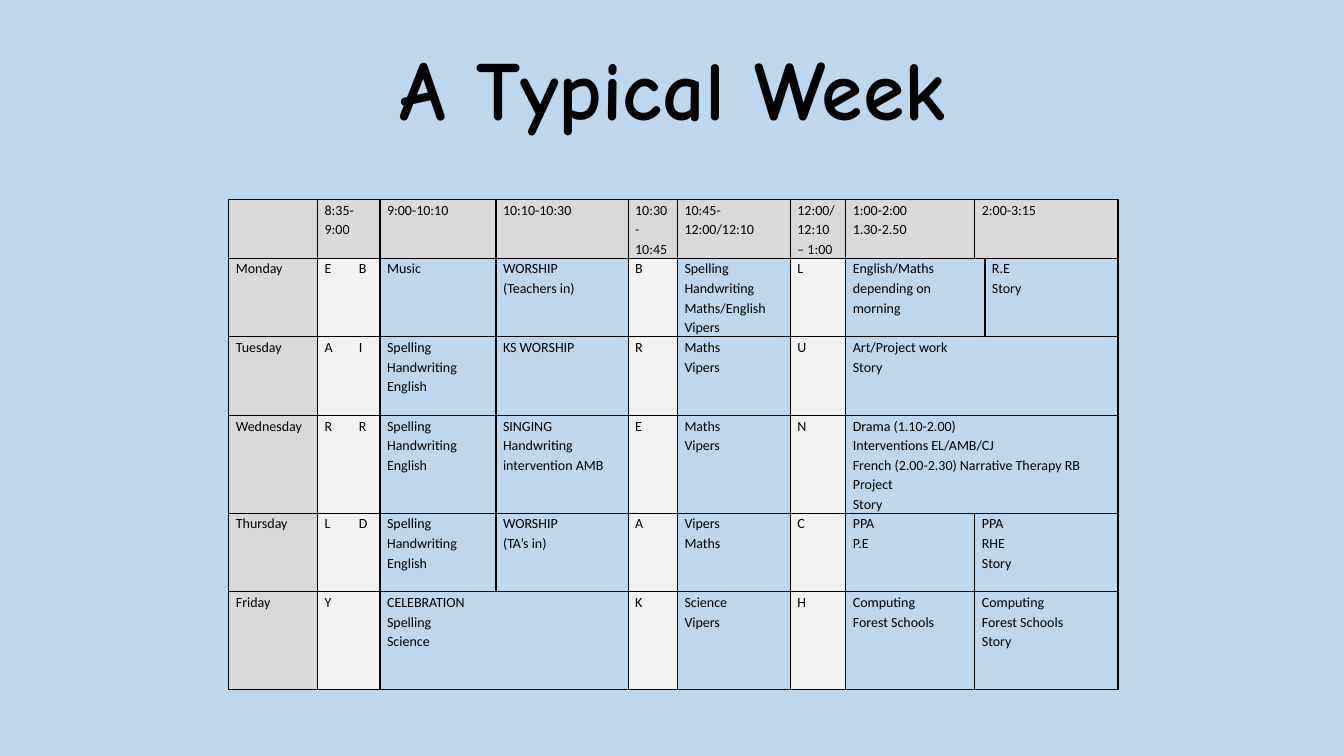
from dataclasses import dataclass

from lxml.etree import SubElement
from pptx import Presentation
from pptx.dml.color import RGBColor
from pptx.enum.text import MSO_ANCHOR, PP_ALIGN
from pptx.oxml.ns import qn
from pptx.slide import Slide
from pptx.table import _Cell as Cell
from pptx.util import Inches, Pt

BLACK = RGBColor(0x00, 0x00, 0x00)
SKY = RGBColor(0xBD, 0xD7, 0xEE)
HEADING_GREY = RGBColor(0xD9, 0xD9, 0xD9)
BREAK_GREY = RGBColor(0xF2, 0xF2, 0xF2)

COLUMN_WIDTHS = (0.88, 0.62, 1.15, 1.31, 0.49, 1.12, 0.55, 1.28, 0.1, 1.32)
ROW_HEIGHTS = (0.58, 0.78, 0.78, 0.97, 0.78, 0.97)
BREAK_COLUMNS = (1, 4, 6)  # early bird, break, lunch
EARLY_BIRD_TAB = 0.34


@dataclass(frozen=True)
class Slot:
    """One timetable entry: its lines and how many columns it covers."""
    lines: tuple[str, ...] = ()
    span: int = 1


def slot(*lines: str, span: int = 1) -> Slot:
    return Slot(lines, span)


ENGLISH = slot("Spelling", "Handwriting", "English")
MATHS = slot("Maths", "Vipers")

WEEK: tuple[tuple[Slot, ...], ...] = (
    (slot(), slot("8:35-9:00"), slot("9:00-10:10"), slot("10:10-10:30"),
     slot("10:30-10:45"), slot("10:45-12:00/12:10"),
     slot("12:00/", "12:10 – 1:00"), slot("1:00-2:00", "1.30-2.50"),
     slot("2:00-3:15", span=2)),
    (slot("Monday"), slot("E\tB"), slot("Music"),
     slot("WORSHIP", "(Teachers in)"), slot("B"),
     slot("Spelling", "Handwriting", "Maths/English", "Vipers"), slot("L"),
     slot("English/Maths depending on morning", span=2), slot("R.E", "Story")),
    (slot("Tuesday"), slot("A\tI"), ENGLISH, slot("KS WORSHIP"), slot("R"),
     MATHS, slot("U"), slot("Art/Project work", "Story", span=3)),
    (slot("Wednesday"), slot("R\tR"), ENGLISH,
     slot("SINGING", "Handwriting intervention AMB"), slot("E"),
     MATHS, slot("N"),
     slot("Drama (1.10-2.00)", "Interventions EL/AMB/CJ",
          "French (2.00-2.30) Narrative Therapy RB", "Project", "Story",
          span=3)),
    (slot("Thursday"), slot("L\tD"), ENGLISH, slot("WORSHIP", "(TA’s in)"),
     slot("A"), slot("Vipers", "Maths"), slot("C"), slot("PPA", "P.E"),
     slot("PPA", "RHE", "Story", span=2)),
    (slot("Friday"), slot("Y"),
     slot("CELEBRATION", "Spelling", "Science", span=2), slot("K"),
     slot("Science", "Vipers"), slot("H"), slot("Computing", "Forest Schools"),
     slot("Computing", "Forest Schools", "Story", span=2)),
)


def add_heading(slide: Slide) -> None:
    heading = slide.shapes.title
    heading.left, heading.top = Inches(0.92), Inches(0.2)
    heading.width, heading.height = Inches(11.5), Inches(1.45)
    heading.text_frame.vertical_anchor = MSO_ANCHOR.MIDDLE
    line = heading.text_frame.paragraphs[0]
    line.alignment = PP_ALIGN.CENTER
    line.line_spacing = 0.9
    words = line.add_run()
    words.text = "A Typical Week"
    words.font.name = "Comic Neue"
    words.font.size = Pt(60)
    words.font.bold = True
    words.font.color.rgb = BLACK


def style_cell(cell: Cell, row: int, column: int) -> None:
    properties = cell._tc.get_or_add_tcPr()
    for side in ("a:lnL", "a:lnR", "a:lnT", "a:lnB"):
        border = SubElement(properties, qn(side), w=str(Pt(1)))
        ink = SubElement(border, qn("a:solidFill"))
        SubElement(ink, qn("a:srgbClr"), val=str(BLACK))
    if row == 0 or column == 0:
        cell.fill.solid()
        cell.fill.fore_color.rgb = HEADING_GREY
    elif column in BREAK_COLUMNS:
        cell.fill.solid()
        cell.fill.fore_color.rgb = BREAK_GREY
    else:
        cell.fill.background()
    cell.margin_left = cell.margin_right = Inches(0.07)
    cell.margin_top = cell.margin_bottom = 0


def write_entry(cell: Cell, entry: Slot) -> None:
    for number, text in enumerate(entry.lines):
        frame = cell.text_frame
        line = frame.add_paragraph() if number else frame.paragraphs[0]
        line.line_spacing = 1.15
        if "\t" in text:
            stops = SubElement(line._p.get_or_add_pPr(), qn("a:tabLst"))
            SubElement(stops, qn("a:tab"),
                       pos=str(Inches(EARLY_BIRD_TAB)), algn="l")
        words = line.add_run()
        words.text = text
        words.font.name = "Calibri"
        words.font.size = Pt(10)
        words.font.color.rgb = BLACK


def add_timetable(slide: Slide) -> None:
    timetable = slide.shapes.add_table(
        len(ROW_HEIGHTS), len(COLUMN_WIDTHS), Inches(2.27), Inches(1.98),
        Inches(sum(COLUMN_WIDTHS)), Inches(sum(ROW_HEIGHTS))).table
    timetable.first_row = timetable.horz_banding = False
    for column, width in zip(timetable.columns, COLUMN_WIDTHS):
        column.width = Inches(width)
    for row, height in zip(timetable.rows, ROW_HEIGHTS):
        row.height = Inches(height)

    for row, entries in enumerate(WEEK):
        for column in range(len(COLUMN_WIDTHS)):
            style_cell(timetable.cell(row, column), row, column)
        start = 0
        for entry in entries:
            cell = timetable.cell(row, start)
            if entry.span > 1:
                cell.merge(timetable.cell(row, start + entry.span - 1))
            write_entry(cell, entry)
            start += entry.span


def main() -> None:
    deck = Presentation()
    deck.slide_width, deck.slide_height = Inches(13.33), Inches(7.5)
    slide = deck.slides.add_slide(deck.slide_layouts[5])  # title only
    slide.background.fill.solid()
    slide.background.fill.fore_color.rgb = SKY
    add_heading(slide)
    add_timetable(slide)
    deck.save("out.pptx")


if __name__ == "__main__":
    main()
